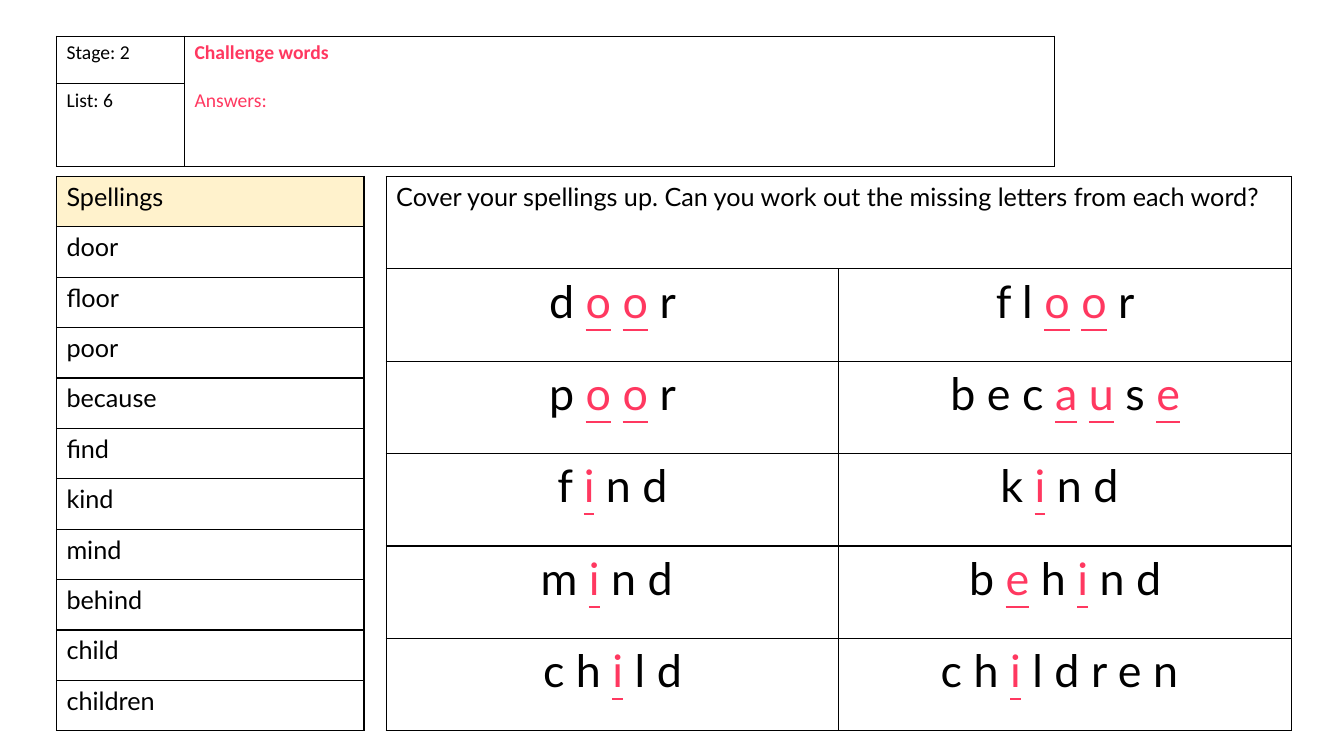
"""Build a spelling answer slide with three bordered tables."""
from lxml import etree
from pptx import Presentation
from pptx.dml.color import RGBColor
from pptx.enum.text import PP_ALIGN
from pptx.oxml.ns import qn
from pptx.util import Inches, Pt

CENTER = PP_ALIGN.CENTER
COLORS = {"ink": "000000", "answer": "FF3860", "heading": "FFF2CC"}

STAGE, LIST = "Stage: 2", "List: 6"
TITLE, SUBTITLE = "Challenge words", "Answers:"
SPELLINGS = ["Spellings", "door", "floor", "poor", "because", "find",
             "kind", "mind", "behind", "child", "children"]
QUESTION = "Cover your spellings up. Can you work out the missing letters from each word?"
# Underscores enclose each missing letter.
PUZZLES = [
    ("d _o_ _o_ r", "f l _o_ _o_ r"),
    ("p _o_ _o_ r", "b e c _a_ _u_ s _e_"),
    ("f _i_ n d", "k _i_ n d "),
    ("m _i_ n d ", "b _e_ h _i_ n d"),
    ("c h _i_ l d", "c h _i_ l d r e n "),
]

LEFT, BODY_TOP, BODY_HEIGHT = 0.56, 1.75, 5.5
HEADER = {"left": LEFT, "top": 0.36, "widths": [1.27, 8.63], "heights": [0.47, 0.82]}
WORDS = {"left": LEFT, "top": BODY_TOP, "widths": [3.05],
         "heights": [BODY_HEIGHT / len(SPELLINGS)] * len(SPELLINGS)}
GRID_ROWS = len(PUZZLES) + 1
GRID = {"left": 3.83, "top": BODY_TOP, "widths": [4.49] * 2,
        "heights": [BODY_HEIGHT / GRID_ROWS] * GRID_ROWS}

HEADER_FONT = {"name": "Calibri", "size": Pt(14)}
WORD_FONT = {"name": "Lato", "size": Pt(18)}
PUZZLE_FONT = {"name": "Lato", "size": Pt(32)}


def add_borders(cell):
    tc_pr = cell._tc.get_or_add_tcPr()
    for side in ("lnL", "lnR", "lnT", "lnB"):
        ln = etree.SubElement(tc_pr, qn(f"a:{side}"), w=str(Pt(1)))
        fill = etree.SubElement(ln, qn("a:solidFill"))
        etree.SubElement(fill, qn("a:srgbClr"), val=COLORS["ink"])


def add_grid(s, left, top, widths, heights):
    table = s.shapes.add_table(
        len(heights), len(widths), Inches(left), Inches(top),
        Inches(sum(widths)), Inches(sum(heights))).table
    table.first_row = table.horz_banding = False
    for column, width in zip(table.columns, widths):
        column.width = Inches(width)
    for row, height in zip(table.rows, heights):
        row.height = Inches(height)
        for cell in row.cells:
            add_borders(cell)
            cell.fill.background()
    return table


def add_run(p, text, font, color="ink", **extra):
    r = p.add_run()
    r.text = text
    for key, value in {**font, **extra}.items():
        setattr(r.font, key, value)
    r.font.color.rgb = RGBColor.from_string(COLORS[color])


def write(cell, text, font, color="ink", **extra):
    add_run(cell.text_frame.paragraphs[0], text, font, color, **extra)


def write_puzzle(cell, puzzle):
    p = cell.text_frame.paragraphs[0]
    p.alignment = CENTER
    for i, part in enumerate(puzzle.split("_")):
        missing = i % 2 == 1
        if part:
            add_run(p, part, PUZZLE_FONT, "answer" if missing else "ink", underline=missing)


def main():
    prs = Presentation()
    prs.slide_width, prs.slide_height = Inches(13.33), Inches(7.5)
    s = prs.slides.add_slide(prs.slide_layouts[6])

    words = add_grid(s, **WORDS)
    for i, word in enumerate(SPELLINGS):
        write(words.cell(i, 0), word, WORD_FONT)
    heading = words.cell(0, 0).fill
    heading.solid()
    heading.fore_color.rgb = RGBColor.from_string(COLORS["heading"])

    header = add_grid(s, **HEADER)
    header.cell(0, 1).merge(header.cell(1, 1))
    write(header.cell(0, 0), STAGE, HEADER_FONT)
    write(header.cell(1, 0), LIST, HEADER_FONT)
    write(header.cell(0, 1), TITLE, HEADER_FONT, "answer", bold=True)
    p = header.cell(0, 1).text_frame.add_paragraph()
    p.space_before = Pt(17)
    add_run(p, SUBTITLE, HEADER_FONT, "answer")

    grid = add_grid(s, **GRID)
    grid.cell(0, 0).merge(grid.cell(0, 1))
    write(grid.cell(0, 0), QUESTION, WORD_FONT)
    for row, pair in enumerate(PUZZLES, start=1):
        for column, puzzle in enumerate(pair):
            write_puzzle(grid.cell(row, column), puzzle)

    prs.save("out.pptx")


if __name__ == "__main__":
    main()
